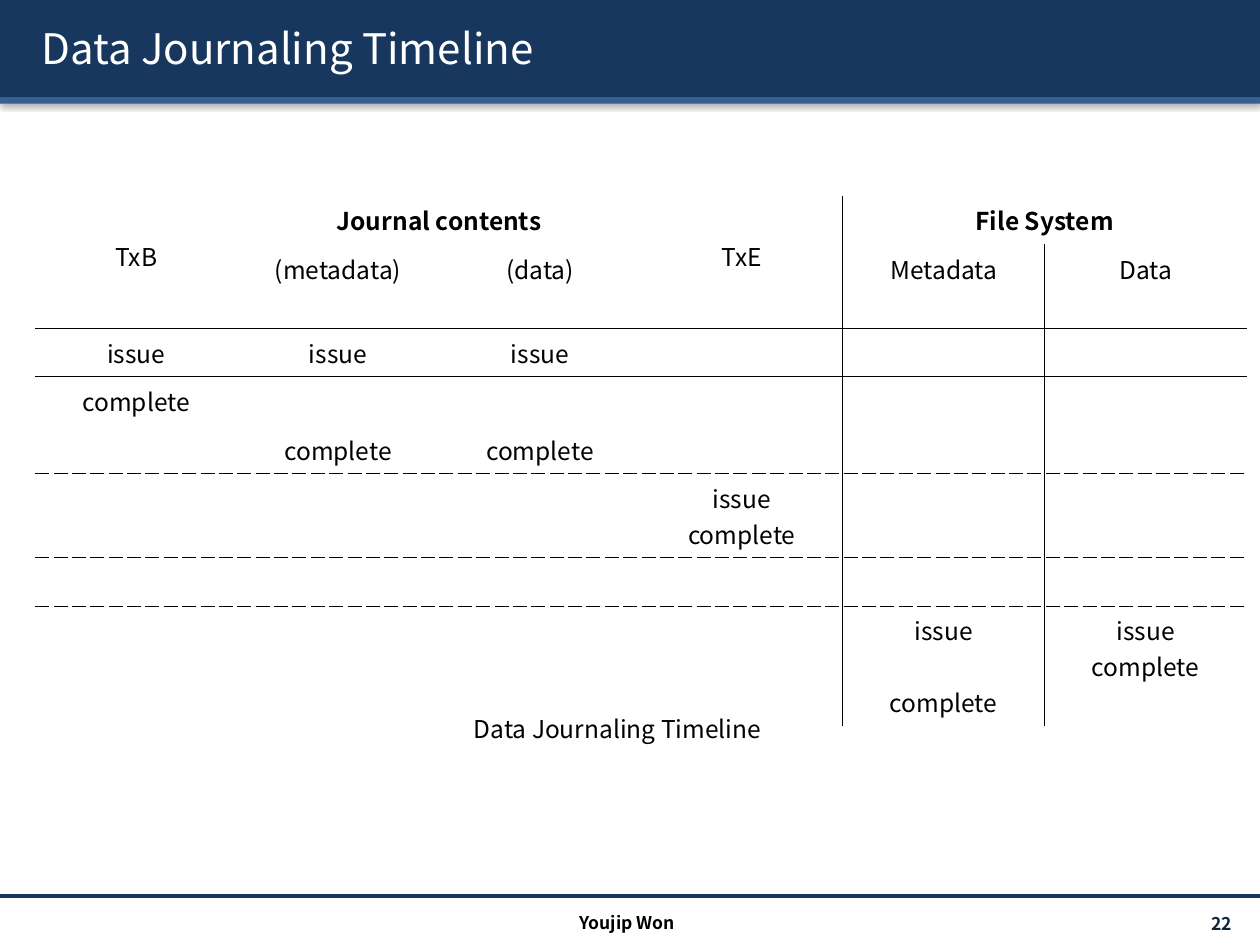
from lxml import etree
from pptx import Presentation
from pptx.dml.color import RGBColor
from pptx.enum.shapes import MSO_CONNECTOR as Connector, MSO_SHAPE as Shape
from pptx.enum.text import MSO_ANCHOR as Anchor, PP_ALIGN as Align
from pptx.oxml import parse_xml
from pptx.oxml.ns import nsdecls, qn
from pptx.util import Cm, Pt

FONT = "Noto Sans CJK KR"
BLACK = RGBColor(0, 0, 0)
WHITE = RGBColor(255, 255, 255)
NAVY = RGBColor(0x17, 0x37, 0x5E)
BLUE = RGBColor(0x37, 0x60, 0x92)
INK = RGBColor(0x0F, 0x24, 0x3E)

TITLE = "Data Journaling Timeline"
BARS = [(0, 1.96, NAVY), (1.96, 0.13, BLUE)]
LABELS = [
    ("22", (22.12, 18.31, 2.97, 0.61), 10, True, INK, Align.RIGHT),
    ("Youjip Won", (8.43, 18.29, 8.43, 0.61), 10, True, BLACK, Align.CENTER),
    ("Data Journaling Timeline", (9.3, 14.27, 7.34, 0.86), 14, False, BLACK, Align.LEFT),
]
ROWS = [
    ["TxB", "Journal contents", "", "TxE", "File System", ""],
    ["", "(metadata)", "(data)", "", "Metadata", "Data"],
    ["issue", "issue", "issue", "", "", ""],
    ["complete", "", "", "", "", ""],
    ["", "complete", "complete", "", "", ""],
    ["", "", "", "issue\ncomplete", "", ""],
    ["", "", "", "", "", ""],
    ["", "", "", "", "issue\ncomplete", "issue\ncomplete"],
]
ROW_HEIGHTS = [0.92, 0.92, 0.92, 0.92, 0.92, 1.27, 0.92, 1.8]
COLUMN_WIDTH = 4.07
MERGES = [((0, 0), (1, 0)), ((0, 1), (0, 2)), ((0, 3), (1, 3)), ((0, 4), (0, 5))]
TALL_HEADERS = [(0, 0), (0, 3)]
GROUP_HEADERS = [(0, 1), (0, 4)]
DELAYED_CELL = (7, 4)
RULES = {1: "solid", 4: "sysDash", 5: "sysDash"}
LAST_JOURNAL_COLUMN = 3


def style_run(run, size, color, bold=False):
    run.font.name = FONT
    run.font.size = Pt(size)
    run.font.bold = bold
    run.font.color.rgb = color


def shadow(blur, distance, angle, alpha):
    return parse_xml(
        f'<a:effectLst {nsdecls("a")}><a:outerShdw blurRad="{Pt(blur)}" dist="{Pt(distance)}" '
        f'dir="{angle * 60000}" algn="t" rotWithShape="0"><a:srgbClr val="000000">'
        f'<a:alpha val="{alpha * 1000}"/></a:srgbClr></a:outerShdw></a:effectLst>')


def add_bars(shapes):
    for top, height, color in BARS:
        bar = shapes.add_shape(Shape.RECTANGLE, 0, Cm(top), Cm(25.4), Cm(height))
        bar.fill.solid()
        bar.fill.fore_color.rgb = color
        bar.line.fill.background()
        bar._element.spPr.append(shadow(3.1, 1.6, 90, 38))
    rule = shapes.add_connector(Connector.STRAIGHT, 0, Cm(18.06), Cm(25.4), Cm(18.06))
    rule.line.color.rgb = NAVY
    rule.line.width = Pt(2)
    etree.SubElement(rule._element.spPr, qn("a:effectLst"))


def place_title(shapes):
    title = shapes.title
    title.left, title.top, title.width, title.height = Cm(0.58), Cm(0.15), Cm(24.41), Cm(1.63)
    title.text_frame.text = TITLE
    title.text_frame.vertical_anchor = Anchor.MIDDLE
    paragraph = title.text_frame.paragraphs[0]
    paragraph.alignment = Align.LEFT
    run = paragraph.runs[0]
    style_run(run, 24, WHITE)
    run.font._element.find(qn("a:solidFill")).addnext(shadow(0, 2, 45, 100))
    shapes._spTree.append(title._element)


def cell_borders(row, column):
    borders = {}
    if column == LAST_JOURNAL_COLUMN + 1:
        borders["lnL"] = "solid"
    if column == LAST_JOURNAL_COLUMN:
        borders["lnR"] = "solid"
    if row - 1 in RULES:
        borders["lnT"] = RULES[row - 1]
    bottom_row = 1 if (row, column) in TALL_HEADERS else row
    if bottom_row in RULES:
        borders["lnB"] = RULES[bottom_row]
    return borders


def draw_borders(cell, borders):
    properties = cell._tc.get_or_add_tcPr()
    for position, (side, dash) in enumerate(borders.items()):
        properties.insert(position, parse_xml(
            f'<a:{side} {nsdecls("a")} w="{Pt(0.75)}"><a:solidFill><a:srgbClr val="{BLACK}"/>'
            f'</a:solidFill><a:prstDash val="{dash}"/></a:{side}>'))


def fill_cell(cell, text, bold):
    cell.fill.solid()
    cell.fill.fore_color.rgb = WHITE
    cell.text_frame.text = text
    for paragraph in cell.text_frame.paragraphs:
        paragraph.alignment = Align.CENTER
        for run in paragraph.runs:
            style_run(run, 14, BLACK, bold)
        if not text:
            end = etree.SubElement(paragraph._p, qn("a:endParaRPr"), sz="1400")
            etree.SubElement(end, qn("a:latin"), typeface=FONT)


def add_timeline(shapes):
    frame = shapes.add_table(len(ROWS), len(ROWS[0]), Cm(0.71), Cm(3.95),
                             Cm(COLUMN_WIDTH * len(ROWS[0])), Cm(sum(ROW_HEIGHTS)))
    table = frame.table
    table.first_row = table.horz_banding = False
    table._tbl.tblPr.find(qn("a:tableStyleId")).text = "{2D5ABB26-0587-4C30-8999-92F81FD0307C}"
    for column in table.columns:
        column.width = Cm(COLUMN_WIDTH)
    for row, height in zip(table.rows, ROW_HEIGHTS):
        row.height = Cm(height)
    for first, last in MERGES:
        table.cell(*first).merge(table.cell(*last))
    for row, texts in enumerate(ROWS):
        for column, text in enumerate(texts):
            cell = table.cell(row, column)
            fill_cell(cell, text, (row, column) in GROUP_HEADERS)
            draw_borders(cell, cell_borders(row, column))
    for position in TALL_HEADERS:
        table.cell(*position).margin_top = Cm(0.85)
    table.cell(*DELAYED_CELL).text_frame.paragraphs[1].space_before = Pt(20.5)


def add_labels(shapes):
    for text, box, size, bold, color, alignment in LABELS:
        text_frame = shapes.add_textbox(*map(Cm, box)).text_frame
        text_frame.word_wrap = True
        text_frame.vertical_anchor = Anchor.MIDDLE
        text_frame.text = text
        paragraph = text_frame.paragraphs[0]
        paragraph.alignment = alignment
        style_run(paragraph.runs[0], size, color, bold)


def main():
    presentation = Presentation()
    presentation.slide_width, presentation.slide_height = Cm(25.4), Cm(19.05)
    slide = presentation.slides.add_slide(presentation.slide_layouts[5])
    add_bars(slide.shapes)
    place_title(slide.shapes)
    add_timeline(slide.shapes)
    add_labels(slide.shapes)
    presentation.save("out.pptx")


if __name__ == "__main__":
    main()
